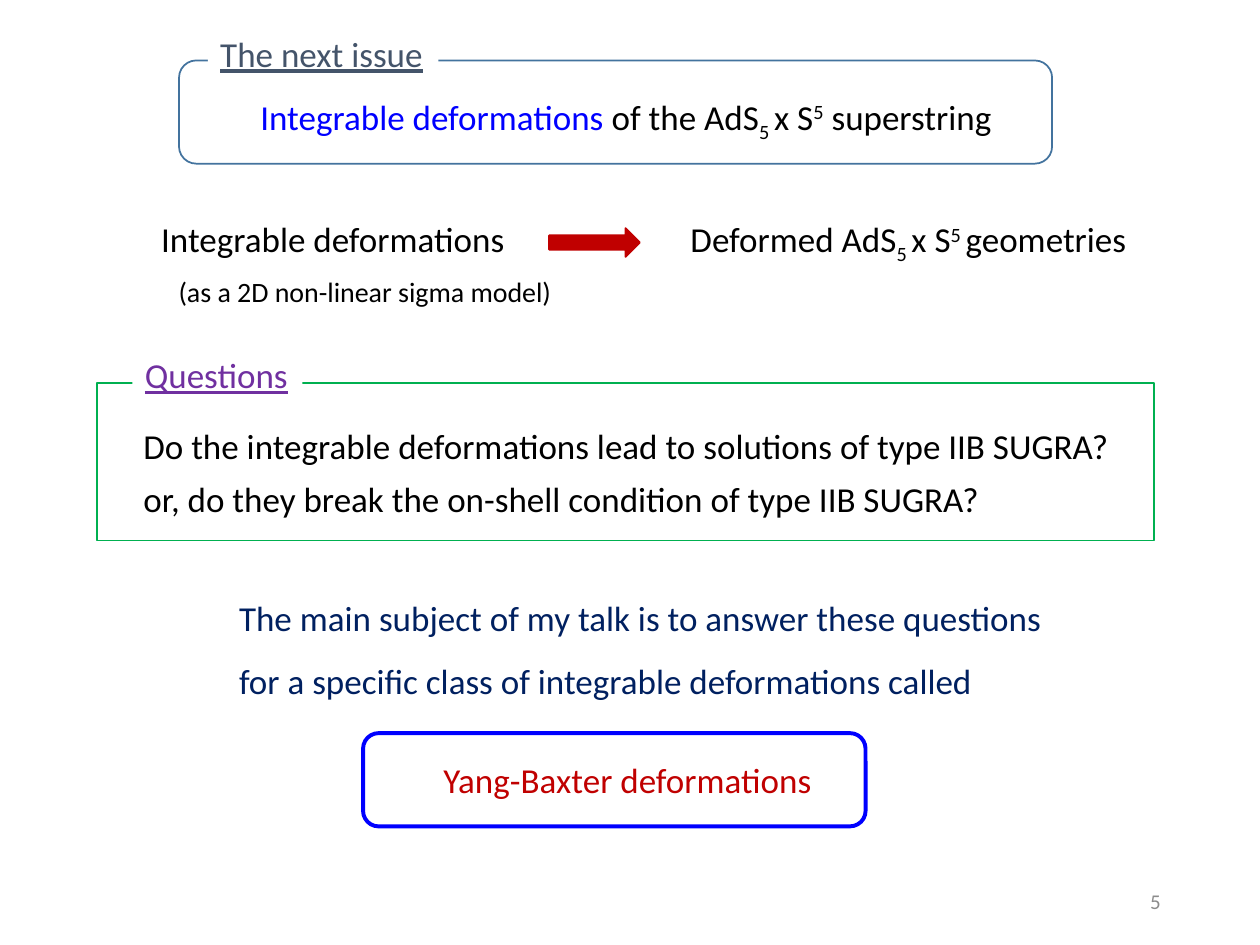
from pptx import Presentation
from pptx.dml.color import RGBColor
from pptx.enum.shapes import MSO_SHAPE as Shape
from pptx.enum.text import MSO_ANCHOR as Anchor, MSO_AUTO_SIZE as AutoSize, PP_ALIGN as Align
from pptx.util import Cm, Pt

COLORS = {
    "black": "000000", "white": "FFFFFF", "grey": "8C8C8C", "slate": "44546A",
    "steel": "43739E", "blue": "0000FF", "navy": "002060", "red": "C00000",
    "green": "00B050", "purple": "7030A0",
}
SUB, SUPER = "-25000", "30000"


def add_text(place, lines, color="black", fill=None, anchor=Anchor.TOP, para_format=None, **font_format):
    """Add a text box; each line is a list of (text, baseline, colour) with the last two optional."""
    box = page.shapes.add_textbox(*map(Cm, place))
    frame = box.text_frame
    frame.word_wrap = False
    frame.auto_size = AutoSize.SHAPE_TO_FIT_TEXT if anchor == Anchor.TOP else AutoSize.NONE
    frame.vertical_anchor = anchor
    if fill:
        box.fill.solid()
        box.fill.fore_color.rgb = RGBColor.from_string(COLORS[fill])
    for number, line in enumerate(lines):
        para = frame.add_paragraph() if number else frame.paragraphs[0]
        for name, value in (para_format or {}).items():
            setattr(para, name, value)
        for text, *extra in line:
            span = para.add_run()
            span.text = text
            baseline, span_color = (extra + [None, None])[:2]
            for name, value in {"name": "Calibri", "size": Pt(20), **font_format}.items():
                setattr(span.font, name, value)
            span.font.color.rgb = RGBColor.from_string(COLORS[span_color or color])
            if baseline:
                span.font._element.set("baseline", baseline)


def add_outline(kind, place, color, width=1, fill=None):
    shape = page.shapes.add_shape(kind, *map(Cm, place))
    shape.shadow.inherit = False
    shape.line.color.rgb = RGBColor.from_string(COLORS[color])
    shape.line.width = Pt(width)
    if fill:
        shape.fill.solid()
        shape.fill.fore_color.rgb = RGBColor.from_string(COLORS[fill])
    else:
        shape.fill.background()


deck = Presentation()
deck.slide_width, deck.slide_height = Cm(25.4), Cm(19.05)
page = deck.slides.add_slide(deck.slide_layouts[6])

# Page number
add_text((17.93, 17.65, 5.72, 1.02), [[("5",)]], "grey", anchor=Anchor.MIDDLE,
         para_format={"alignment": Align.RIGHT}, size=Pt(12))

# The next issue
add_text((5, 1.8, 15.54, 1.12), [[
    ("Integrable deformations ", None, "blue"), ("of the AdS",), ("5 ", SUB),
    ("x S",), ("5", SUPER), (" superstring",),
]])
add_outline(Shape.ROUNDED_RECTANGLE, (3.61, 1.22, 17.6, 2.08), "steel")
add_text((4.19, 0.53, 4.65, 1.12), [[("The next issue",)]], "slate", fill="white", underline=True)

# Deformations lead to geometries
add_text((3, 4.27, 7.82, 1.12), [[("Integrable deformations",)]])
add_text((3.35, 5.41, 8.33, 0.94), [[("(as a 2D non-linear sigma model)",)]], size=Pt(16))
add_outline(Shape.RIGHT_ARROW, (11.07, 4.6, 1.83, 0.58), "red", fill="red")
add_text((13.67, 4.27, 9.47, 1.12), [[
    ("Deformed AdS",), ("5 ", SUB), ("x S",), ("5 ", SUPER), ("geometries",),
]])

# Questions
add_text((2.64, 8.23, 20.17, 2.39), [
    [("Do the integrable deformations lead to solutions of type IIB SUGRA?",)],
    [("or, do they break the on-shell condition of type IIB SUGRA?",)],
], para_format={"alignment": Align.JUSTIFY, "line_spacing": 1.25})
add_outline(Shape.RECTANGLE, (1.96, 7.72, 21.31, 3.18), "green")
add_text((2.67, 7.01, 3.43, 1.12), [[("Questions",)]], "purple", fill="white", underline=True)

# Subject of the talk
add_text((4.57, 11.48, 17.02, 2.82), [
    [("The main subject of my talk is to answer these questions",)],
    [("for a specific class of integrable deformations called",)],
], "navy", para_format={"line_spacing": 1.5})
add_text((8.69, 15.16, 8, 1.12), [[("Yang-Baxter deformations",)]], "red")
add_outline(Shape.ROUNDED_RECTANGLE, (7.32, 14.78, 10.13, 1.88), "blue", width=2.25)

deck.save("out.pptx")
